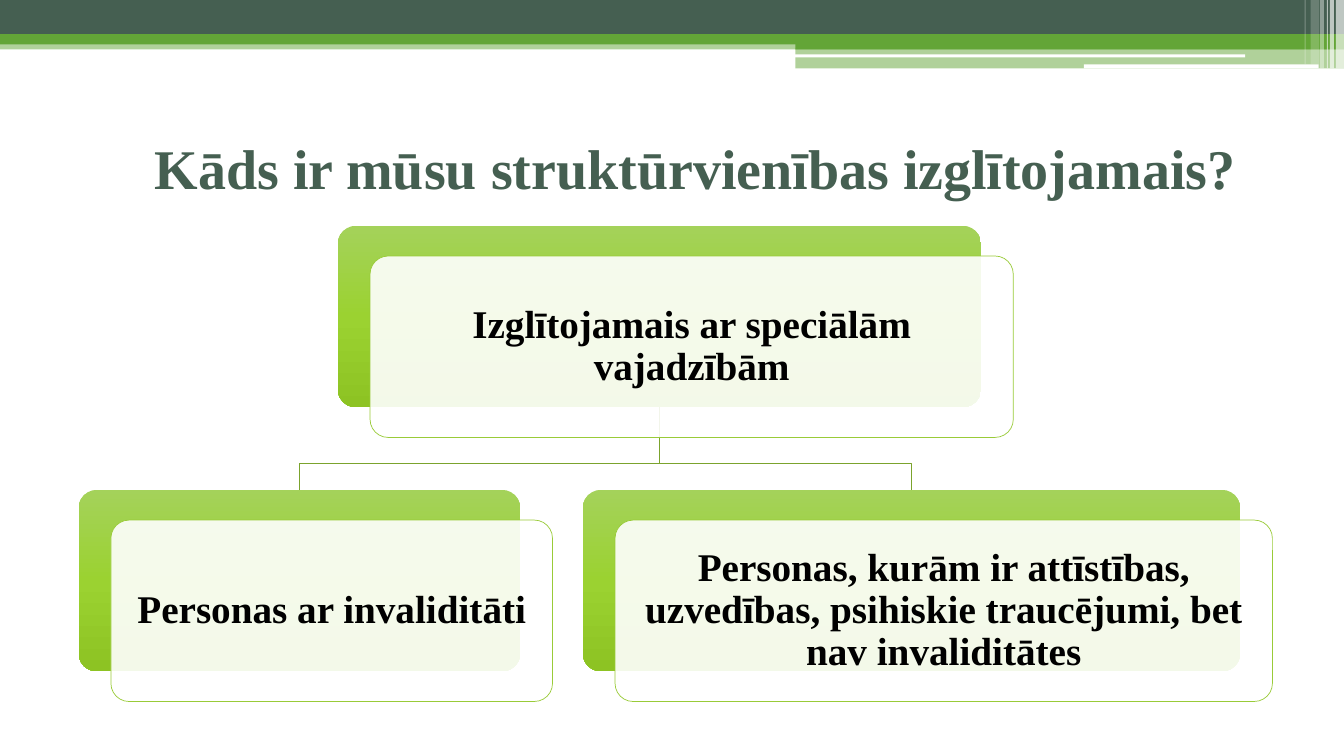
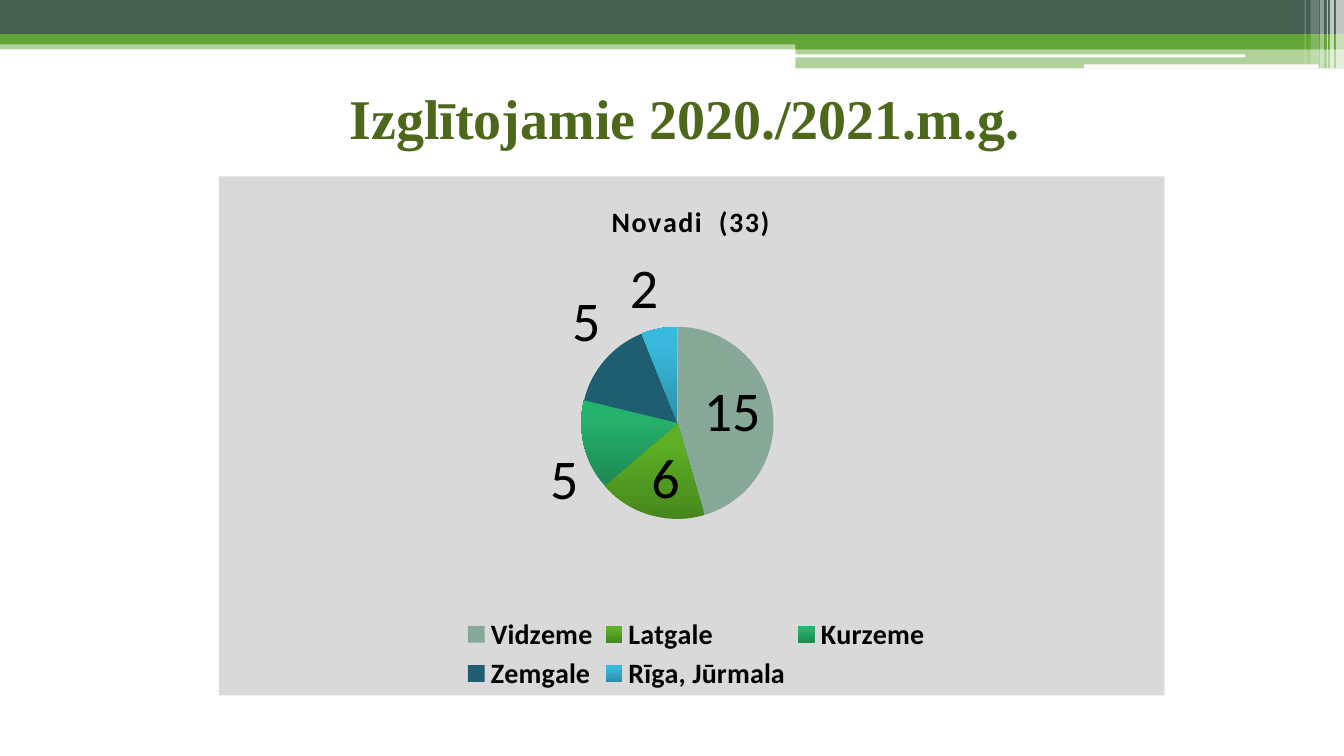
import copy
import pptx
import pptx.chart.data
import pptx.dml.color
import pptx.enum.chart
import pptx.enum.shapes
import pptx.enum.text
import pptx.oxml
import pptx.oxml.ns
import pptx.util

RGB = pptx.dml.color.RGBColor
Inches = pptx.util.Inches
Pt = pptx.util.Pt
qn = pptx.oxml.ns.qn
SHAPE = pptx.enum.shapes.MSO_SHAPE
MID = pptx.enum.text.MSO_ANCHOR.MIDDLE
CENTER = pptx.enum.text.PP_ALIGN.CENTER

PINE = RGB(0x45, 0x5F, 0x51)
GREEN = RGB(0x63, 0xA5, 0x37)
OLIVE = RGB(0x4D, 0x67, 0x1B)
LIME = RGB(0x99, 0xCB, 0x38)
MOSS = RGB(0x7B, 0xA3, 0x2D)
WHITE = RGB(0xFF, 0xFF, 0xFF)
BLACK = RGB(0, 0, 0)
GRAY = RGB(0xD9, 0xD9, 0xD9)
SAGE = RGB(0x87, 0xA8, 0x96)
TEAL = RGB(0x1E, 0x5E, 0x70)


def ramp(*stops):
    return [(pos / 100, RGB.from_string(tone)) for pos, tone in stops]


LEAF = ramp((0, "A4D25A"), (50, "9BD231"), (100, "8DC323"))
GRASS = ramp((0, "47871D"), (80, "5DB025"), (100, "5DB323"))
JADE = ramp((0, "1D8953"), (80, "25B26C"), (100, "22B66C"))
SKY = ramp((0, "2C8EA9"), (80, "39B8DB"), (100, "36BBDF"))

SERIF = "Times New Roman"
SANS = "Calibri"
WIDE = 13.33

# left, top, width, height, colour, opacity in percent
BANDS = [
    (0, 0.4, WIDE, 0.09, GREEN, 50),
    (0, 0, WIDE, 0.34, PINE, 100),
    (0, 0.34, WIDE, 0.1, GREEN, 100),
    (7.89, 0.39, 5.44, 0.1, GREEN, 100),
    (7.89, 0.48, 5.44, 0.2, GREEN, 50),
    (7.88, 0.54, 4.47, 0.03, WHITE, 100),
    (10.75, 0.64, 2.33, 0.04, WHITE, 100),
    (13.25, 0, 0.08, 0.68, WHITE, 65),
    (13.19, 0, 0.04, 0.68, WHITE, 65),
    (13.16, 0, 0.01, 0.68, WHITE, 60),
    (13.09, 0, 0.04, 0.68, WHITE, 40),
    (13, 0, 0.08, 0.64, WHITE, 20),
    (12.94, 0, 0.01, 0.64, WHITE, 30),
]


def block(slide, kind, box, tone, clear=100):
    """Add a lineless shape; clear is its opacity in percent."""
    shape = slide.shapes.add_shape(kind, *map(Inches, box))
    shape.shadow.inherit = False
    shape.line.fill.background()
    shape.fill.solid()
    shape.fill.fore_color.rgb = tone
    if clear < 100:
        color = next(shape._element.spPr.iter(qn("a:srgbClr")))
        alpha = pptx.oxml.parse_xml(
            f'<a:alpha {pptx.oxml.ns.nsdecls("a")} val="{clear * 1000}"/>')
        color.append(alpha)
    return shape


def blend(fill, root, stops, angle):
    """Give a fill three stops; the angle runs counter-clockwise."""
    fill.gradient()
    fill.gradient_angle = angle
    ladder = next(root.iter(qn("a:gsLst")))
    ladder.append(copy.deepcopy(ladder[0]))
    for stop, (pos, tone) in zip(fill.gradient_stops, stops):
        stop.position = pos
        stop.color.rgb = tone


def dress(prs, slide):
    """Draw the bands, then move them to the back of the master."""
    tree = prs.slide_master.shapes._spTree
    for i, (*box, tone, clear) in enumerate(BANDS):
        item = block(slide, SHAPE.RECTANGLE, box, tone, clear)._element
        item.nvSpPr.cNvPr.set("id", str(100 + i))
        tree.insert(2 + i, item)


def style(para, size, tone):
    para.alignment = CENTER
    font = para.font
    font.name, font.size, font.bold = SERIF, Pt(size), True
    font.color.rgb = tone


def head(slide, text, box, tone):
    title = slide.shapes.title
    title.left, title.top, title.width, title.height = map(Inches, box)
    frame = title.text_frame
    frame.text = text
    frame.vertical_anchor = MID
    style(frame.paragraphs[0], 40, tone)


def card(slide, text, box):
    """Draw a green plate with a pale card shifted over it."""
    x, y, w, h = box
    back = block(slide, SHAPE.ROUNDED_RECTANGLE, box, LIME)
    blend(back.fill, back._element, LEAF, 270)
    front = block(slide, SHAPE.ROUNDED_RECTANGLE,
                  (x + 0.32, y + 0.3, w, h), WHITE, 90)
    front.line.color.rgb = LIME
    front.line.width = Pt(0.5)
    for shape in (back, front):
        shape.adjustments[0] = 0.1
    frame = front.text_frame
    frame.word_wrap = True
    frame.vertical_anchor = MID
    frame.margin_left = frame.margin_right = Inches(0.17)
    frame.margin_top = frame.margin_bottom = Inches(0.17)
    frame.text = text
    para = frame.paragraphs[0]
    para.line_spacing = 0.9
    style(para, 28, BLACK)


def link(slide, top, low):
    """Join the foot of one box to the head of another."""
    start, end = top[0] + top[2] / 2, low[0] + low[2] / 2
    foot, bend = top[1] + top[3], low[1] - 0.26
    points = [(start, foot), (start, bend), (end, bend), (end, low[1])]
    points = [(Inches(x), Inches(y)) for x, y in points]
    path = slide.shapes.build_freeform(*points[0])
    path.add_line_segments(points[1:], close=False)
    line = path.convert_to_shape()
    line.shadow.inherit = False
    line.fill.background()
    line.line.color.rgb = MOSS
    line.line.width = Pt(0.5)


def chart_font(font, size, bold=False):
    font.name, font.size, font.bold = SANS, Pt(size), bold
    font.color.rgb = BLACK


def place(part, spot, **sides):
    """Fix a chart part at fractions of the chart's size."""
    old = part.find(qn("c:layout"))
    if old is not None:
        part.remove(old)
    inner = '<c:layoutTarget val="inner"/>' if spot == 0 else ""
    modes = "".join(f'<c:{k}Mode val="edge"/>' for k in "xy")
    sizes = "".join(f'<c:{k} val="{v}"/>' for k, v in sides.items())
    part.insert(spot, pptx.oxml.parse_xml(
        f'<c:layout {pptx.oxml.ns.nsdecls("c")}><c:manualLayout>'
        f'{inner}{modes}{sizes}</c:manualLayout></c:layout>'))


def pie(slide, box, name, data):
    book = pptx.chart.data.CategoryChartData()
    book.categories = [row[0] for row in data]
    book.add_series("Series 1", [row[1] for row in data])
    chart = slide.shapes.add_chart(
        pptx.enum.chart.XL_CHART_TYPE.PIE, *map(Inches, box), book).chart
    chart_font(chart.font, 10)
    space = chart._chartSpace
    space.find(qn("c:txPr")).addprevious(pptx.oxml.parse_xml(
        f'<c:spPr {pptx.oxml.ns.nsdecls("c", "a")}><a:solidFill>'
        f'<a:srgbClr val="{GRAY}"/></a:solidFill>'
        '<a:ln><a:noFill/></a:ln></c:spPr>'))

    chart.has_title = True
    frame = chart.chart_title.text_frame
    frame.text = name
    para = frame.paragraphs[0]
    chart_font(para.font, 20, True)
    para.runs[0]._r.get_or_add_rPr().set("spc", "100")
    place(chart.chart_title._element, 1, x=0.41, y=0.04)

    chart.has_legend = True
    key = chart.legend
    key.position = pptx.enum.chart.XL_LEGEND_POSITION.BOTTOM
    key.include_in_layout = False
    chart_font(key.font, 20, True)
    place(key._element, 1, x=0.25, y=0.84, w=0.51, h=0.16)
    place(space.chart.plotArea, 0, x=0.38, y=0.29, w=0.21, h=0.37)

    plot = chart.plots[0]
    plot.vary_by_categories = True
    plot.has_data_labels = True
    labels = plot.data_labels
    labels.show_value = True
    labels.show_percentage = False
    labels.position = pptx.enum.chart.XL_LABEL_POSITION.BEST_FIT
    chart_font(labels.font, 40)
    for i, (_, _, tone) in enumerate(data):
        look = plot.series[0].points[i].format
        look.line.fill.background()
        if isinstance(tone, list):
            blend(look.fill, look._element, tone, 90)
        else:
            look.fill.solid()
            look.fill.fore_color.rgb = tone


def learner(slide):
    head(slide, "Kāds ir mūsu struktūrvienības izglītojamais?",
         (0.67, 1.07, 12.45, 1.17), PINE)
    top = (3.35, 2.24, 6.38, 1.8)
    kids = [
        ("Personas ar invaliditāti", (0.78, 4.86, 4.38, 1.8)),
        ("Personas, kurām ir attīstības, uzvedības, psihiskie "
         "traucējumi, bet nav invaliditātes", (5.78, 4.86, 6.52, 1.8)),
    ]
    for _, box in kids:
        link(slide, top, box)
    for text, box in [("Izglītojamais ar speciālām vajadzībām", top), *kids]:
        card(slide, text, box)


def counts(slide):
    head(slide, "Izglītojamie 2020./2021.m.g.", (2.29, 0.7, 9, 0.93), OLIVE)
    pie(slide, (2.17, 1.75, 9.38, 5.15), "Novadi  (33)", [
        ("Vidzeme", 15, SAGE),
        ("Latgale", 6, GRASS),
        ("Kurzeme", 5, JADE),
        ("Zemgale", 5, TEAL),
        ("Rīga, Jūrmala", 2, SKY),
    ])


def main():
    prs = pptx.Presentation()
    prs.slide_width, prs.slide_height = Inches(WIDE), Inches(7.5)
    first, second = (prs.slides.add_slide(prs.slide_layouts[5])
                     for _ in range(2))
    dress(prs, first)
    learner(first)
    counts(second)
    prs.save("out.pptx")


if __name__ == "__main__":
    main()
